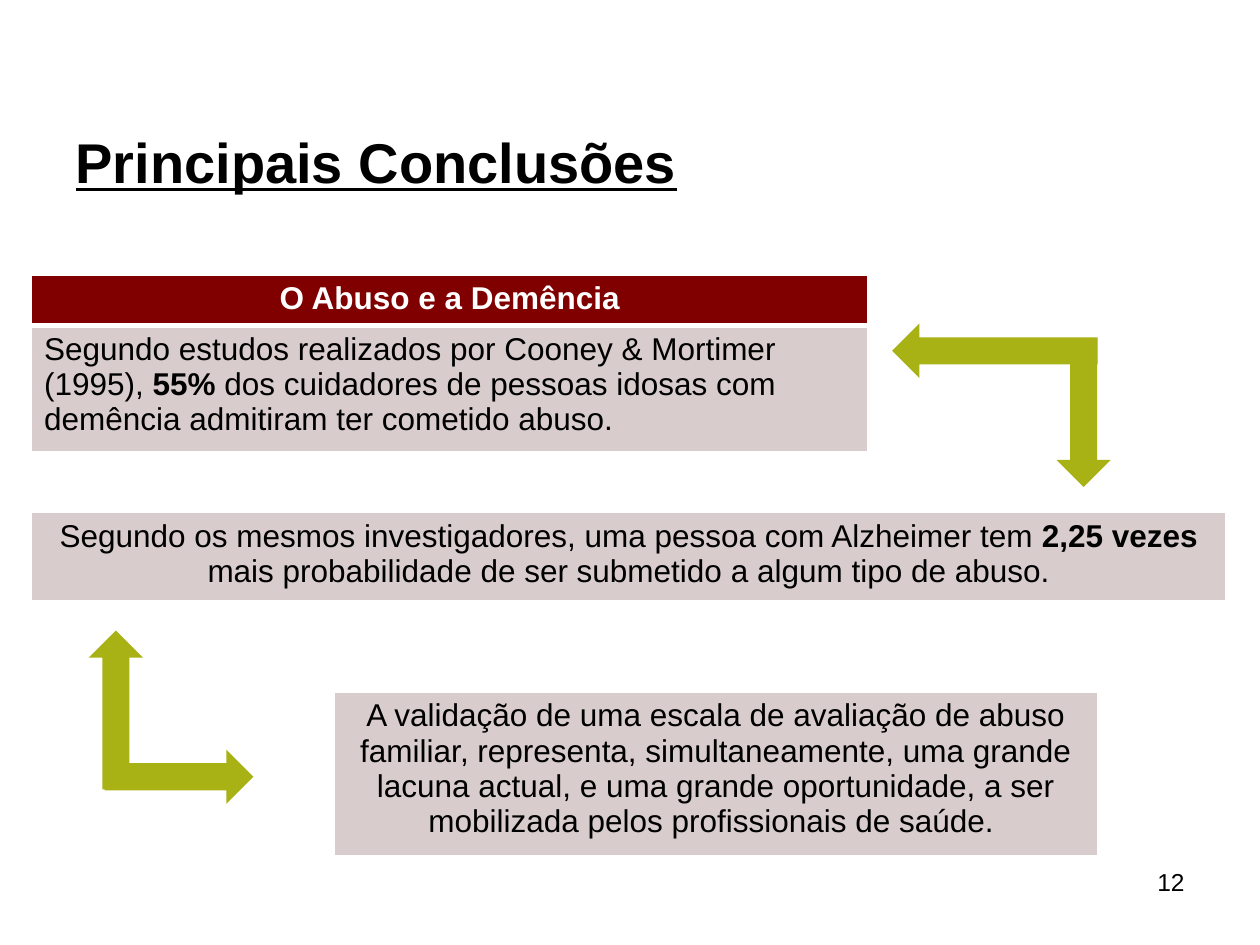
from dataclasses import dataclass

import pptx
import pptx.dml.color
import pptx.enum.shapes
import pptx.enum.text
import pptx.oxml
import pptx.oxml.ns
import pptx.util
from pptx.util import Pt

RGBColor = pptx.dml.color.RGBColor
Align = pptx.enum.text.PP_ALIGN
BLACK = RGBColor(0x00, 0x00, 0x00)
WHITE = RGBColor(0xFF, 0xFF, 0xFF)
MAROON = RGBColor(0x80, 0x00, 0x00)
ROSE_GREY = RGBColor(0xD8, 0xCC, 0xCC)
OLIVE = RGBColor(0xA8, 0xB2, 0x14)
FONT_NAME = "Arial"
ARROW_THICKNESS = 31


@dataclass
class Run:
    text: str
    bold: bool = False


@dataclass
class Finding:
    left: float
    top: float
    width: float
    row_heights: tuple[float, float]
    heading: str
    statement: list[Run]
    align: Align = Align.CENTER


@dataclass
class Arrow:
    left: float
    top: float
    length: float
    rotation: int


FINDINGS = [
    Finding(18, 157, 478, (28.8, 67.5), "O Abuso e a Demência", [
        Run("Segundo estudos realizados por Cooney & Mortimer (1995), "),
        Run("55% ", True),
        Run("dos cuidadores de pessoas idosas com demência admitiram ter cometido abuso."),
    ], Align.LEFT),
    Finding(18, 264, 682.5, (28.2, 50.3), "", [
        Run("Segundo os mesmos investigadores, uma pessoa com Alzheimer tem "),
        Run("2,25 vezes ", True),
        Run("mais probabilidade de ser submetido a algum tipo de abuso."),
    ]),
    Finding(190.8, 366.5, 436.3, (29, 87.5), "", [
        Run("A validação de uma escala de avaliação de abuso familiar, representa, "
            "simultaneamente, uma grande lacuna actual, e uma grande oportunidade, "
            "a ser mobilizada pelos profissionais de saúde. "),
    ]),
]

ARROWS = [
    Arrow(576.7, 220.3, 85, 90),
    Arrow(509.8, 185, 117.4, 180),
    Arrow(20.9, 390.2, 90.7, 270),
    Arrow(59.8, 428.4, 85, 0),
]


def format_font(font, size: float, color: RGBColor) -> None:
    font.name = FONT_NAME
    font.size = Pt(size)
    font.color.rgb = color


def set_borders(cell, top: float, bottom: float) -> None:
    properties = cell._tc.get_or_add_tcPr()
    for side, width in (("L", 1), ("R", 1), ("T", top), ("B", bottom)):
        properties.append(pptx.oxml.parse_xml(
            f'<a:ln{side} {pptx.oxml.ns.nsdecls("a")} w="{Pt(width)}">'
            f'<a:solidFill><a:srgbClr val="{WHITE}"/></a:solidFill></a:ln{side}>'))


def fill_cell(cell, color: RGBColor) -> None:
    cell.fill.solid()
    cell.fill.fore_color.rgb = color


def draw_finding(slide, finding: Finding) -> None:
    table = slide.shapes.add_table(
        2, 1, Pt(finding.left), Pt(finding.top),
        Pt(finding.width), Pt(sum(finding.row_heights))).table
    table.first_row = bool(finding.heading)
    table.horz_banding = False
    for row, height in zip(table.rows, finding.row_heights):
        row.height = Pt(height)

    heading_cell, statement_cell = table.cell(0, 0), table.cell(1, 0)
    divider = 3 if finding.heading else 1
    set_borders(heading_cell, 1, divider)
    set_borders(statement_cell, divider, 1)
    if finding.heading:
        fill_cell(heading_cell, MAROON)
        heading = heading_cell.text_frame.paragraphs[0]
        heading.text = finding.heading
        heading.alignment = Align.CENTER
        format_font(heading.font, 18, WHITE)
        heading.font.bold = True
    else:
        heading_cell.fill.background()

    fill_cell(statement_cell, ROSE_GREY)
    statement = statement_cell.text_frame.paragraphs[0]
    statement.alignment = finding.align
    format_font(statement.font, 18, BLACK)
    for part in finding.statement:
        run = statement.add_run()
        run.text = part.text
        run.font.bold = part.bold


def draw_arrow(slide, arrow: Arrow) -> None:
    shape = slide.shapes.add_shape(
        pptx.enum.shapes.MSO_SHAPE.RIGHT_ARROW, Pt(arrow.left), Pt(arrow.top),
        Pt(arrow.length), Pt(ARROW_THICKNESS))
    shape.rotation = arrow.rotation
    shape.shadow.inherit = False
    shape.fill.solid()
    shape.fill.fore_color.rgb = OLIVE
    shape.line.fill.background()


def draw_title(slide, text: str) -> None:
    title = slide.shapes.title
    title.left, title.top, title.width, title.height = Pt(36), Pt(69), Pt(648), Pt(48)
    title.text_frame.vertical_anchor = pptx.enum.text.MSO_ANCHOR.TOP
    heading = title.text_frame.paragraphs[0]
    heading.text = text
    heading.alignment = Align.LEFT
    format_font(heading.font, 32, BLACK)
    heading.font.bold = True
    heading.font.underline = True


def draw_page_number(slide, number: str) -> None:
    box = slide.shapes.add_textbox(Pt(516), Pt(492), Pt(168), Pt(37.5))
    box.text_frame.word_wrap = True
    page_number = box.text_frame.paragraphs[0]
    page_number.text = number
    page_number.alignment = Align.RIGHT
    format_font(page_number.font, 14, BLACK)


def main() -> None:
    presentation = pptx.Presentation()
    presentation.slide_width, presentation.slide_height = Pt(720), Pt(540)
    slide = presentation.slides.add_slide(presentation.slide_layouts[5])
    draw_title(slide, "Principais Conclusões")
    draw_page_number(slide, "12")
    for finding in FINDINGS:
        draw_finding(slide, finding)
    for arrow in ARROWS:
        draw_arrow(slide, arrow)
    presentation.save("out.pptx")


if __name__ == "__main__":
    main()
